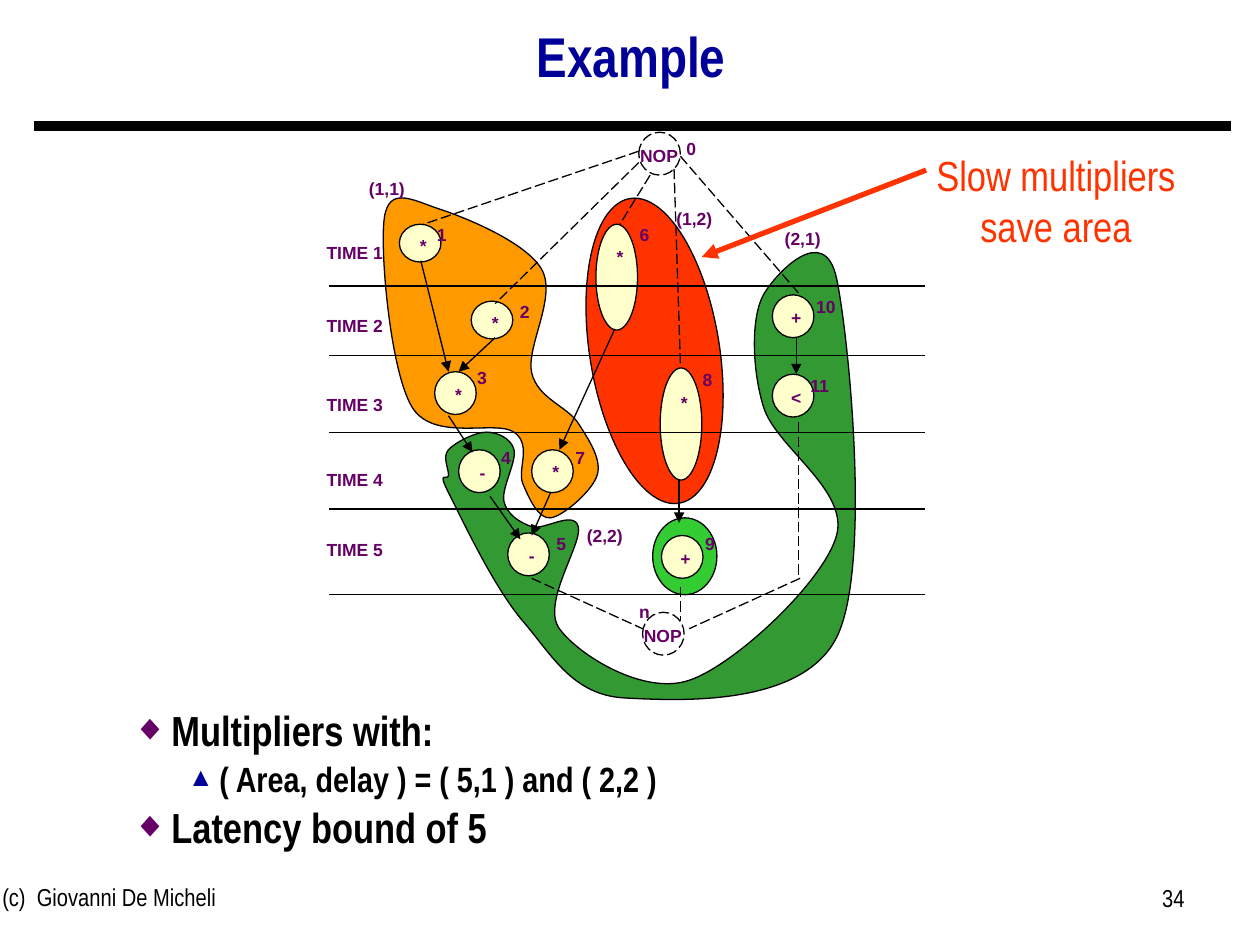
from lxml.etree import Element, SubElement
from pptx import Presentation
from pptx.dml.color import RGBColor
from pptx.enum.dml import MSO_LINE
from pptx.enum.shapes import MSO_CONNECTOR, MSO_SHAPE
from pptx.enum.text import MSO_ANCHOR, MSO_AUTO_SIZE, PP_ALIGN
from pptx.oxml.ns import qn
from pptx.util import Cm, Pt

BLACK, PURPLE, NAVY, RED = "000000", "660066", "000099", "FF3300"
CREAM, ORANGE, GREEN, LIME = "FFFFCC", "FF9900", "339933", "33CC33"
NODE_W, NODE_H = 0.33, 0.34

ALU_REGION = [(3.56, 3.91), (3.56, 3.77), (3.56, 3.57), (3.86, 3.43), (4.08, 3.57), (4, 3.98),
              (4.22, 4.18), (4.59, 4.18), (4.44, 4.99), (5.47, 5.4), (6.64, 4.25), (6.06, 3.23),
              (6.06, 2.34), (6.64, 2.21), (6.64, 5.06), (4.96, 5.54), (4.15, 4.93)]
FAST_MULTIPLIER_REGION = [(3.05, 1.73), (3.27, 3.23), (4.08, 3.43), (4.15, 3.84), (4.37, 4.11),
                          (4.74, 3.77), (4.59, 3.36), (4.22, 2.96), (4.3, 2.14), (3.49, 1.66)]

# operation, left, top, height, drop of the sign, number, left and top of the number
OPERATIONS = [
    ("*", 3.17, 1.78, 0.3, 0.04, "1", 3.27, 1.73),
    ("*", 3.74, 2.39, 0.3, 0.04, "2", 3.93, 2.34),
    ("*", 3.45, 2.95, NODE_H, 0.05, "3", 3.59, 2.86),
    ("-", 3.64, 3.57, NODE_H, 0.05, "4", 3.78, 3.5),
    ("-", 4.03, 4.23, NODE_H, 0.05, "5", 4.22, 4.18),
    ("*", 4.73, 1.78, 0.84, 0.12, "6", 4.88, 1.73),
    ("*", 4.22, 3.57, NODE_H, 0.04, "7", 4.37, 3.5),
    ("*", 5.24, 2.92, 0.89, 0.14, "8", 5.38, 2.88),
    ("+", 5.25, 4.25, NODE_H, 0.05, "9", 5.4, 4.18),
    ("+", 6.13, 2.34, NODE_H, 0.05, "10", 6.32, 2.3),
    ("<", 6.13, 2.97, NODE_H, 0.05, "11", 6.27, 2.93),
]
NOPS = [(5.07, 1.05, "0", 5.25, 1.05), (5.1, 4.86, "n", 4.88, 4.72)]
# top of the label, height of the rule under the time step
TIME_STEPS = [(1.87, 2.27), (2.45, 2.82), (3.08, 3.43), (3.67, 4.04), (4.23, 4.72)]
RESOURCES = [("(1,1)", 2.78, 1.36), ("(1,2)", 5.22, 1.6), ("(2,1)", 6.08, 1.76), ("(2,2)", 4.51, 4.12)]
DEPENDENCIES = [(3.34, 2.07, 3.56, 2.95), (3.93, 2.68, 3.64, 2.95), (5.39, 3.81, 5.39, 4.15),
                (6.32, 2.68, 6.32, 2.97), (3.56, 3.3, 3.75, 3.59), (3.89, 3.94, 4.13, 4.28),
                (4.37, 3.91, 4.22, 4.25), (4.88, 2.61, 4.44, 3.57)]
NOP_LINKS = [(5.07, 1.2, 3.36, 1.78), (5.07, 1.29, 3.93, 2.41), (5.16, 1.39, 4.92, 1.78),
             (5.35, 1.34, 5.4, 2.89), (5.4, 1.24, 6.35, 2.34), (4.22, 4.59, 5.1, 4.99),
             (5.4, 4.66, 5.4, 4.93), (6.35, 4.59, 5.47, 4.99), (6.34, 4.56, 6.34, 3.33)]


def color(value):
    return RGBColor.from_string(value)


def lengths(*inches):
    return [Cm(value * 2.54) for value in inches]


def set_font(paragraph, size, name, value, bold=False):
    font = paragraph.font
    font.size, font.name, font.bold = Pt(size), name, bold
    font.color.rgb = color(value)


def paint(shape, fill):
    shape.shadow.inherit = False
    if fill:
        shape.fill.solid()
        shape.fill.fore_color.rgb = color(fill)
    else:
        shape.fill.background()
    shape.line.color.rgb = color(BLACK)
    shape.line.width = Pt(0.75)


def add_ellipse(shapes, box, fill=None):
    ellipse = shapes.add_shape(MSO_SHAPE.OVAL, *lengths(*box))
    paint(ellipse, fill)
    return ellipse


def curve_points(anchors):
    """Two handles and an end for each stretch of the closed smooth curve."""
    count = len(anchors)
    for i in range(count):
        before, start, end, after = (anchors[(i + k) % count] for k in (-1, 0, 1, 2))
        yield lengths(*(s + (e - b) / 6 for b, s, e in zip(before, start, end)))
        yield lengths(*(e - (a - s) / 6 for s, e, a in zip(start, end, after)))
        yield lengths(*end)


def add_region(shapes, anchors, fill):
    outline = shapes.build_freeform(*lengths(*anchors[0]))
    outline.add_line_segments(list(curve_points(anchors)), close=True)
    region = outline.convert_to_shape()
    segments = list(region._element.iter(qn("a:lnTo")))
    for i in range(0, len(segments), 3):
        curve = Element(qn("a:cubicBezTo"))
        segments[i].addprevious(curve)
        for segment in segments[i:i + 3]:
            curve.append(segment[0])
            segment.getparent().remove(segment)
    paint(region, fill)


def add_line(shapes, ends, value=BLACK, width=0.75, dashed=False, arrow=False):
    connector = shapes.add_connector(MSO_CONNECTOR.STRAIGHT, *lengths(*ends))
    connector.line.color.rgb = color(value)
    connector.line.width = Pt(width)
    if dashed:
        connector.line.dash_style = MSO_LINE.LONG_DASH
    if arrow:
        SubElement(connector.line._get_or_add_ln(), qn("a:tailEnd"), type="triangle")
    SubElement(connector._element.spPr, qn("a:effectLst"))


def add_text(shapes, text, box, size, name, value=BLACK, bold=False, align=PP_ALIGN.CENTER):
    frame = shapes.add_textbox(*lengths(*box)).text_frame
    frame.word_wrap = True
    paragraph = frame.paragraphs[0]
    paragraph.text, paragraph.alignment = text, align
    set_font(paragraph, size, name, value, bold)


def add_label(shapes, text, left, top, width=0.47):
    add_text(shapes, text, (left, top, width, 0.27), 10, "Arial", PURPLE, bold=True)


def add_nop(shapes, left, top):
    nop = shapes.add_group_shape().shapes
    add_ellipse(nop, (left, top, NODE_W, NODE_H)).line.dash_style = MSO_LINE.LONG_DASH
    add_label(nop, "NOP", left - 0.15, top + 0.05, 0.62)


def place(placeholder, box):
    placeholder.left, placeholder.top, placeholder.width, placeholder.height = lengths(*box)
    placeholder.text_frame.auto_size = MSO_AUTO_SIZE.NONE
    return placeholder.text_frame


def set_bullet(paragraph, char, value, percent, margin, hanging):
    properties = paragraph._p.get_or_add_pPr()
    left, indent = lengths(margin, -hanging)
    properties.set("marL", str(left))
    properties.set("indent", str(indent))
    SubElement(SubElement(properties, qn("a:buClr")), qn("a:srgbClr"), val=value)
    SubElement(properties, qn("a:buSzPct"), val=str(percent * 1000))
    SubElement(properties, qn("a:buFont"), typeface="Arial")
    SubElement(properties, qn("a:buChar"), char=char)


def fill_title(title):
    frame = place(title, (0.76, 0, 8.5, 0.94))
    frame.vertical_anchor = MSO_ANCHOR.MIDDLE
    paragraph = frame.paragraphs[0]
    paragraph.text, paragraph.alignment, paragraph.line_spacing = "Example", PP_ALIGN.CENTER, 0.9
    set_font(paragraph, 32, "Arial Narrow", NAVY, bold=True)


def fill_body(body):
    points = [("Multipliers with:", 0), ("( Area, delay ) = ( 5,1 ) and ( 2,2 )", 1),
              ("Latency bound of 5", 0)]
    styles = [(24, ("◆", PURPLE, 85, 0.31, 0.31)), (20, ("▲", NAVY, 75, 0.69, 0.25))]
    frame = place(body, (0.95, 5.62, 8.5, 1.43))
    for i, (text, level) in enumerate(points):
        size, bullet = styles[level]
        paragraph = frame.add_paragraph() if i else frame.paragraphs[0]
        paragraph.text, paragraph.level = text, level
        paragraph.line_spacing, paragraph.space_before = 0.8, Pt(size * 0.3)
        set_bullet(paragraph, *bullet)
        set_font(paragraph, size, "Arial Narrow", BLACK, bold=True)


def add_schedule(shapes):
    add_region(shapes, ALU_REGION, GREEN)
    add_region(shapes, FAST_MULTIPLIER_REGION, ORANGE)
    add_ellipse(shapes, (4.68, 1.56, 1.03, 2.45), RED).rotation = 350.9
    add_ellipse(shapes, (5.18, 4.11, 0.51, 0.61), LIME)
    for sign, left, top, height, drop, *_ in OPERATIONS:
        add_ellipse(shapes, (left, top, NODE_W, height), CREAM)
        add_label(shapes, sign, left, top + drop, 0.38)
    for left, top, *_ in NOPS:
        add_nop(shapes, left, top)
    for number, (label_top, rule) in enumerate(TIME_STEPS, 1):
        add_line(shapes, (2.61, rule, 7.34, rule))
        add_label(shapes, f"TIME {number}", 2.46, label_top, 0.71)
    for ends in NOP_LINKS:
        add_line(shapes, ends, dashed=True)
    for ends in DEPENDENCIES:
        add_line(shapes, ends, arrow=True)
    for *_, number, left, top in OPERATIONS + NOPS:
        add_label(shapes, number, left, top)
    for resource, left, top in RESOURCES:
        add_label(shapes, resource, left, top, 0.58)


def add_callout(shapes):
    callout = shapes.add_group_shape().shapes
    add_text(callout, "Slow multipliers save area", (7.19, 1.14, 2.38, 0.9), 24, "Arial Narrow", RED)
    add_line(callout, (7.35, 1.35, 5.57, 2.04), RED, 3, arrow=True)


def main():
    deck = Presentation()
    deck.slide_width, deck.slide_height = lengths(10, 7.5)
    slide = deck.slides.add_slide(deck.slide_layouts[1])
    shapes = slide.shapes
    add_line(shapes, (0.27, 1, 9.77, 1), width=6)
    add_text(shapes, "(c)  Giovanni De Micheli", (-0.08, 6.95, 3.17, 0.52), 14, "Arial Narrow",
             align=PP_ALIGN.LEFT)
    add_text(shapes, "34", (7.17, 6.96, 2.33, 0.52), 14, "Arial Narrow", align=PP_ALIGN.RIGHT)
    fill_title(shapes.title)
    fill_body(slide.placeholders[1])
    add_schedule(shapes)
    add_callout(shapes)
    deck.save("out.pptx")


if __name__ == "__main__":
    main()
